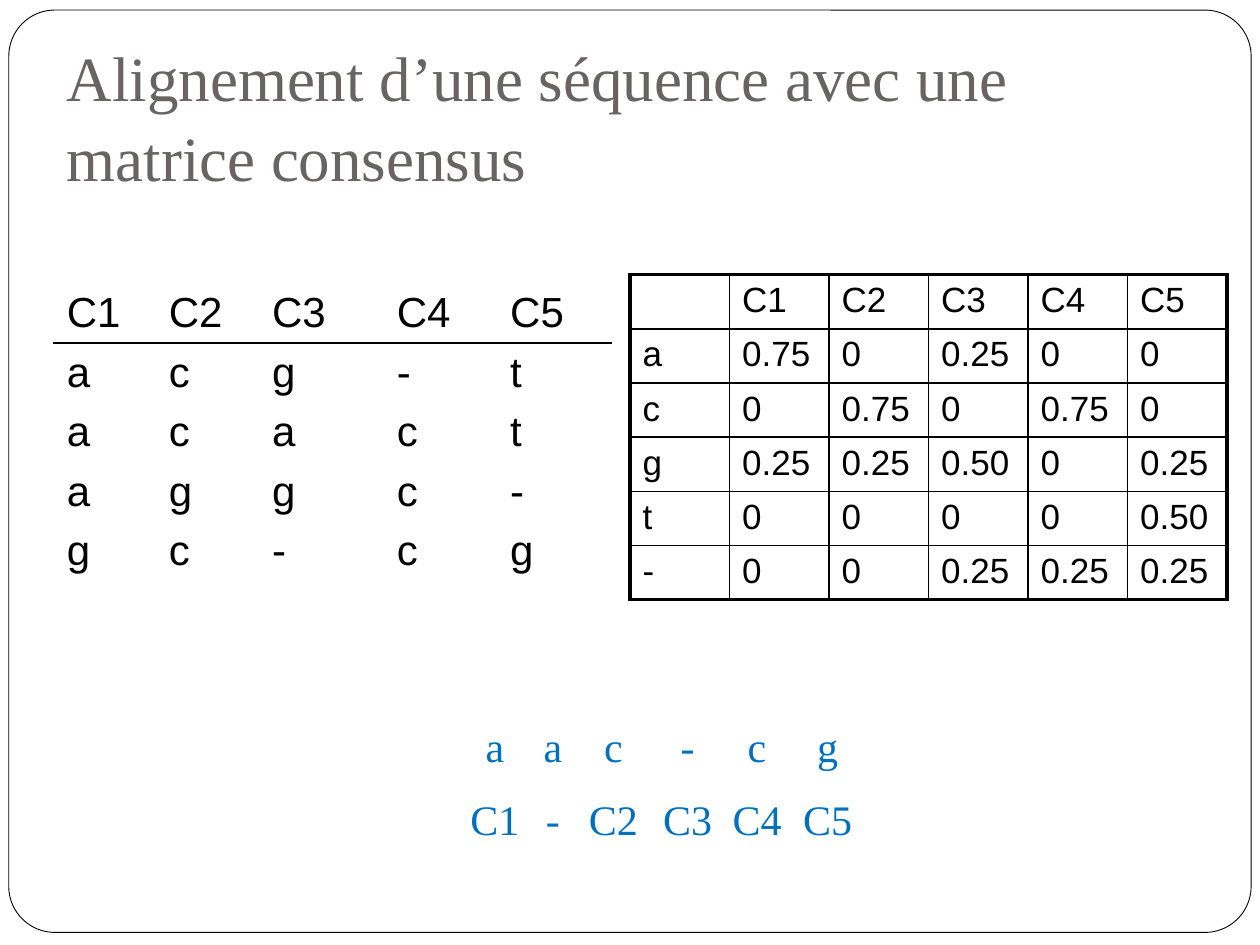
import pptx
import pptx.util
import pptx.dml.color
import pptx.enum.shapes
import pptx.enum.text
import pptx.oxml
import pptx.oxml.ns
from pptx.util import Inches

BLACK = pptx.dml.color.RGBColor(0x00, 0x00, 0x00)
WHITE = pptx.dml.color.RGBColor(0xFF, 0xFF, 0xFF)
GREY = pptx.dml.color.RGBColor(0x69, 0x64, 0x64)
BLUE = pptx.dml.color.RGBColor(0x00, 0x70, 0xC0)
SERIF, SANS = "Times New Roman", "Arial"

# Content
TITLE = "Alignement d’une séquence avec une matrice consensus"
SEQUENCES = [
    ["C1", "C2", "C3", "C4", "C5"],
    ["a", "c", "g", "-", "t"],
    ["a", "c", "a", "c", "t"],
    ["a", "g", "g", "c", "-"],
    ["g", "c", "-", "c", "g"],
]
CONSENSUS = [
    ["", "C1", "C2", "C3", "C4", "C5"],
    ["a", "0.75", "0", "0.25", "0", "0"],
    ["c", "0", "0.75", "0", "0.75", "0"],
    ["g", "0.25", "0.25", "0.50", "0", "0.25"],
    ["t", "0", "0", "0", "0", "0.50"],
    ["-", "0", "0", "0.25", "0.25", "0.25"],
]
ALIGNMENT = [
    ["a", "a", "c", "-", "c", "g"],
    ["C1", "-", "C2", "C3", "C4", "C5"],
]
ALIGNMENT_STOPS = [3.56, 4.02, 4.5, 5.09, 5.64, 6.2]


def write(p, text, font, size, color):
    r = p.add_run()
    r.text = text
    values = {"name": font, "size": pptx.util.Pt(size)}
    for key, value in values.items():
        setattr(r.font, key, value)
    r.font.color.rgb = color


def set_borders(cell, widths):
    """Widths in points, keyed by side; a:ln* elements precede the fill."""
    tc_pr = cell._tc.get_or_add_tcPr()
    sides = [side for side in "LRTB" if side in widths]
    for i, side in enumerate(sides):
        tc_pr.insert(i, pptx.oxml.parse_xml(
            f'<a:ln{side} {pptx.oxml.ns.nsdecls("a")} w="{int(widths[side] * 12700)}">'
            f'<a:solidFill><a:srgbClr val="{BLACK}"/></a:solidFill></a:ln{side}>'))


def add_grid(s, rows, left, top, col_widths, row_height, size, borders):
    frame = s.shapes.add_table(len(rows), len(col_widths), Inches(left), Inches(top),
                               Inches(sum(col_widths)), Inches(row_height * len(rows)))
    table = frame.table
    table.first_row = table.horz_banding = False
    for column, width in zip(table.columns, col_widths):
        column.width = Inches(width)
    for i, values in enumerate(rows):
        table.rows[i].height = Inches(row_height)
        for j, value in enumerate(values):
            cell = table.cell(i, j)
            cell.fill.background()
            if value:
                write(cell.text_frame.paragraphs[0], value, SANS, size, BLACK)
            set_borders(cell, borders(i, j))


def header_rule(i, j):
    return {0: {"B": 1}, 1: {"T": 1}}.get(i, {})


def boxed(i, j):
    last = len(CONSENSUS) - 1
    outer = {"L": j == 0, "R": j == last, "T": i == 0, "B": i == last}
    return {side: 2.25 if edge else 1 for side, edge in outer.items()}


def main():
    prs = pptx.Presentation()
    prs.slide_width, prs.slide_height = Inches(10), Inches(7.5)
    s = prs.slides.add_slide(prs.slide_layouts[5])

    # Rounded frame behind everything
    sp = s.shapes.add_shape(pptx.enum.shapes.MSO_SHAPE.ROUNDED_RECTANGLE,
                            Inches(0.07), Inches(0.08), Inches(9.86), Inches(7.32))
    sp.adjustments[0] = 0.05
    sp.shadow.inherit = False
    sp.fill.solid()
    sp.fill.fore_color.rgb = WHITE
    sp.line.color.rgb = BLACK
    sp.line.width = pptx.util.Pt(0.5)
    s.shapes._spTree.insert(2, sp._element)

    # Title
    title = s.shapes.title
    box = {"left": 0.43, "top": 0.28, "width": 8.66, "height": 1.31}
    for key, value in box.items():
        setattr(title, key, Inches(value))
    tf = title.text_frame
    tf.word_wrap = True
    tf.auto_size = pptx.enum.text.MSO_AUTO_SIZE.NONE
    tf.vertical_anchor = pptx.enum.text.MSO_ANCHOR.BOTTOM
    p = tf.paragraphs[0]
    p.alignment = pptx.enum.text.PP_ALIGN.LEFT
    p.line_spacing = 1.05
    write(p, TITLE, SERIF, 36, GREY)

    # Aligned sequences and consensus matrix
    add_grid(s, SEQUENCES, 0.43, 2.25, [0.81, 0.82, 0.99, 0.9, 0.9], 0.47, 24, header_rule)
    add_grid(s, CONSENSUS, 5, 2.18, [0.79] * 6, 0.43, 20, boxed)

    # Resulting alignment, on centred tab stops
    tf = s.shapes.add_textbox(Inches(0.27), Inches(5.67), Inches(9.37), Inches(1.11)).text_frame
    tf.word_wrap = True
    stops = "".join(f'<a:tab pos="{Inches(x)}" algn="ctr"/>' for x in ALIGNMENT_STOPS)
    for i, symbols in enumerate(ALIGNMENT):
        p = tf.add_paragraph() if i else tf.paragraphs[0]
        if i:
            p.space_before = pptx.util.Pt(13)
        p._p.get_or_add_pPr().append(pptx.oxml.parse_xml(
            f'<a:tabLst {pptx.oxml.ns.nsdecls("a")}>{stops}</a:tabLst>'))
        write(p, "".join("\t" + symbol for symbol in symbols), SERIF, 24, BLUE)

    prs.save("out.pptx")


if __name__ == "__main__":
    main()
